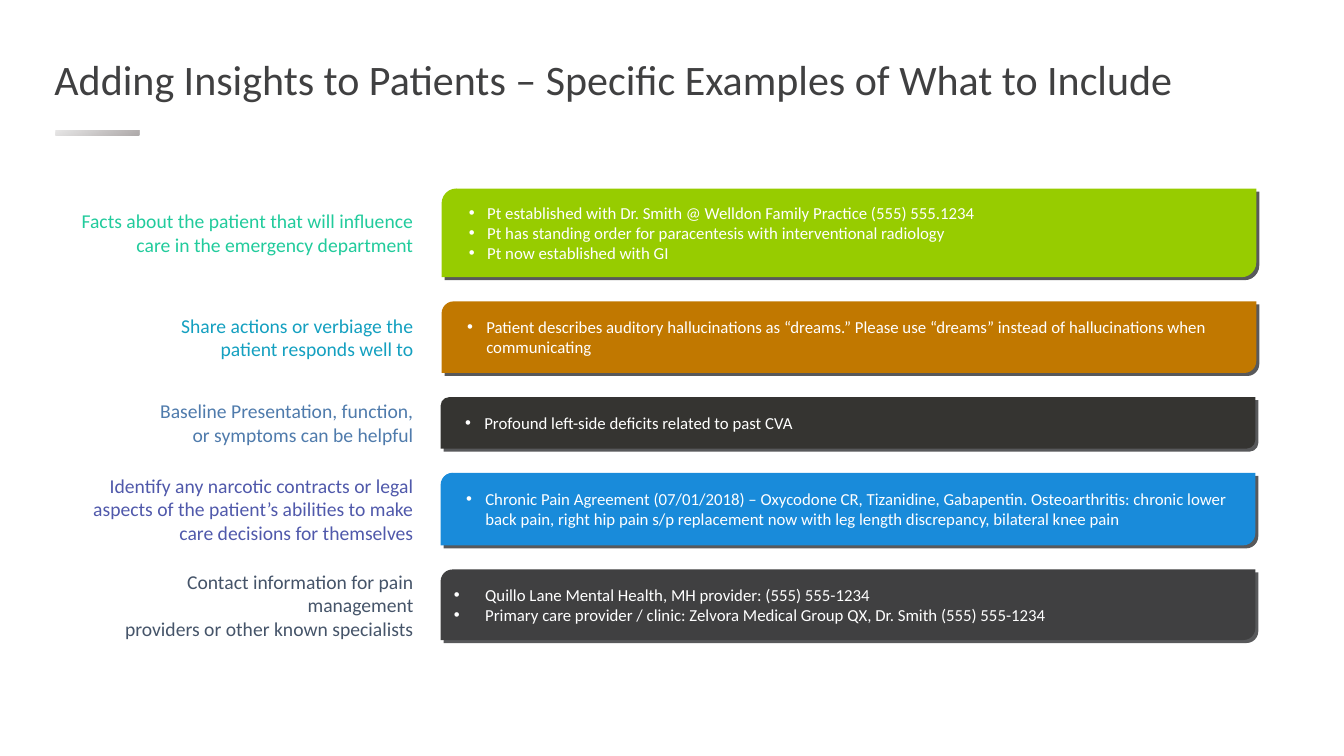
from lxml import etree
from pptx import Presentation
from pptx.dml.color import RGBColor
from pptx.enum.shapes import MSO_SHAPE
from pptx.enum.text import MSO_ANCHOR, MSO_AUTO_SIZE, PP_ALIGN
from pptx.oxml.ns import qn
from pptx.util import Inches, Pt

RECTANGLE, CARD = MSO_SHAPE.RECTANGLE, MSO_SHAPE.ROUND_2_DIAG_RECTANGLE
MIDDLE, NO_FIT = MSO_ANCHOR.MIDDLE, MSO_AUTO_SIZE.NONE
LEFT, RIGHT = PP_ALIGN.LEFT, PP_ALIGN.RIGHT

WHITE = RGBColor(0xFF, 0xFF, 0xFF)
CHARCOAL = RGBColor(0x40, 0x40, 0x41)
EDGE_GRAY = RGBColor(0x58, 0x59, 0x5B)
LIGHT_GRAY = RGBColor(0xE7, 0xE6, 0xE6)
MID_GRAY = RGBColor(0xAF, 0xAB, 0xAB)
GREEN = RGBColor(0x97, 0xCC, 0x00)
OCHRE = RGBColor(0xC1, 0x78, 0x00)
BLACK = RGBColor(0x35, 0x34, 0x31)
BLUE = RGBColor(0x19, 0x8B, 0xDA)
MINT = RGBColor(0x21, 0xCB, 0x9C)
TEAL = RGBColor(0x14, 0xA0, 0xC0)
STEEL = RGBColor(0x4F, 0x7B, 0xAC)
INDIGO = RGBColor(0x50, 0x59, 0xAB)
SLATE = RGBColor(0x45, 0x54, 0x69)

# Grid, in inches
FIRST_TOP, ROW_GAP = 1.87, 0.24
LABEL_LEFT, LABEL_WIDTH = 0.68, 3.52
CARD_WIDTH, EDGE_OFFSET = 8.08, 0.03
BULLET_INDENT = 0.31

# Label, label colour, card colour, card left, height, hanging indent, examples
ROWS = [
    ("Facts about the patient that will influence\ncare in the emergency department",
     MINT, GREEN, 4.38, 0.88, 0.18,
     ["Pt established with Dr. Smith @ Welldon Family Practice (555) 555.1234",
      "Pt has standing order for paracentesis with interventional radiology",
      "Pt now established with GI"]),
    ("Share actions or verbiage the\vpatient responds well to",
     TEAL, OCHRE, 4.38, 0.71, 0.19,
     ["Patient describes auditory hallucinations as “dreams.” Please use “dreams” "
      "instead of hallucinations when communicating"]),
    ("Baseline Presentation, function,\vor symptoms can be helpful",
     STEEL, BLACK, 4.37, 0.51, 0.19,
     ["Profound left-side deficits related to past CVA"]),
    ("Identify any narcotic contracts or legal\vaspects of the patient’s abilities "
     "to make\vcare decisions for themselves",
     INDIGO, BLUE, 4.37, 0.72, 0.19,
     ["Chronic Pain Agreement (07/01/2018) – Oxycodone CR, Tizanidine, Gabapentin. "
      "Osteoarthritis: chronic lower back pain, right hip pain s/p replacement now "
      "with leg length discrepancy, bilateral knee pain"]),
    ("Contact information for pain management\vproviders or other known specialists",
     SLATE, CHARCOAL, 4.37, 0.7, 0.31,
     ["Quillo Lane Mental Health, MH provider: (555) 555-1234",
      "Primary care provider / clinic: Zelvora Medical Group QX, Dr. Smith (555) 555-1234"]),
]


def add_block(kind, left, top, width, height, color):
    block = slide.shapes.add_shape(
        kind, Inches(left), Inches(top), Inches(width), Inches(height))
    block.shadow.inherit = False
    block.line.fill.background()
    block.fill.solid()
    block.fill.fore_color.rgb = color
    return block


def write(frame, text, size, color, align):
    frame_format = {"word_wrap": True, "auto_size": NO_FIT, "vertical_anchor": MIDDLE}
    for name, value in frame_format.items():
        setattr(frame, name, value)
    frame.text = text
    for paragraph in frame.paragraphs:
        paragraph.alignment = align
        for run in paragraph.runs:
            run.font.name, run.font.size = "Calibri", Pt(size)
            run.font.color.rgb = color


presentation = Presentation()
presentation.slide_width, presentation.slide_height = Inches(13.33), Inches(7.5)
slide = presentation.slides.add_slide(presentation.slide_layouts[5])

# Title
title = slide.shapes.title
title_place = {"left": 0.44, "top": 0.52, "width": 12.46, "height": 0.58}
for side, length in title_place.items():
    setattr(title, side, Inches(length))
write(title.text_frame, "Adding Insights to Patients – Specific Examples of What to Include",
      30, CHARCOAL, LEFT)
title.text_frame.margin_top = title.text_frame.margin_bottom = 0
title.text_frame.paragraphs[0].line_spacing = 0.9
title.text_frame.paragraphs[0].space_before = Pt(10)

# Accent bar under the title
accent = add_block(RECTANGLE, 0.55, 1.29, 0.83, 0.05, LIGHT_GRAY)
accent.fill.gradient()
accent.fill.gradient_angle = 300
for stop, color in zip(accent.fill.gradient_stops, (LIGHT_GRAY, MID_GRAY)):
    stop.color.rgb = color

# Rows: label on the left, card with a dark edge on the right
top = FIRST_TOP
for label_text, label_color, card_color, left, height, hanging, examples in ROWS:
    add_block(CARD, left + EDGE_OFFSET, top + EDGE_OFFSET, CARD_WIDTH, height, EDGE_GRAY)
    card = add_block(CARD, left, top, CARD_WIDTH, height, card_color)
    write(card.text_frame, "\n".join(examples), 12, WHITE, LEFT)
    for paragraph in card.text_frame.paragraphs:
        properties = paragraph._p.get_or_add_pPr()
        properties.set("marL", str(Inches(BULLET_INDENT)))
        properties.set("indent", str(-Inches(hanging)))
        etree.SubElement(properties, qn("a:buFont"), typeface="Arial")
        etree.SubElement(properties, qn("a:buChar"), char="•")

    label = slide.shapes.add_textbox(
        Inches(LABEL_LEFT), Inches(top), Inches(LABEL_WIDTH), Inches(height))
    write(label.text_frame, label_text, 14, label_color, RIGHT)
    top += height + ROW_GAP

presentation.save("out.pptx")
